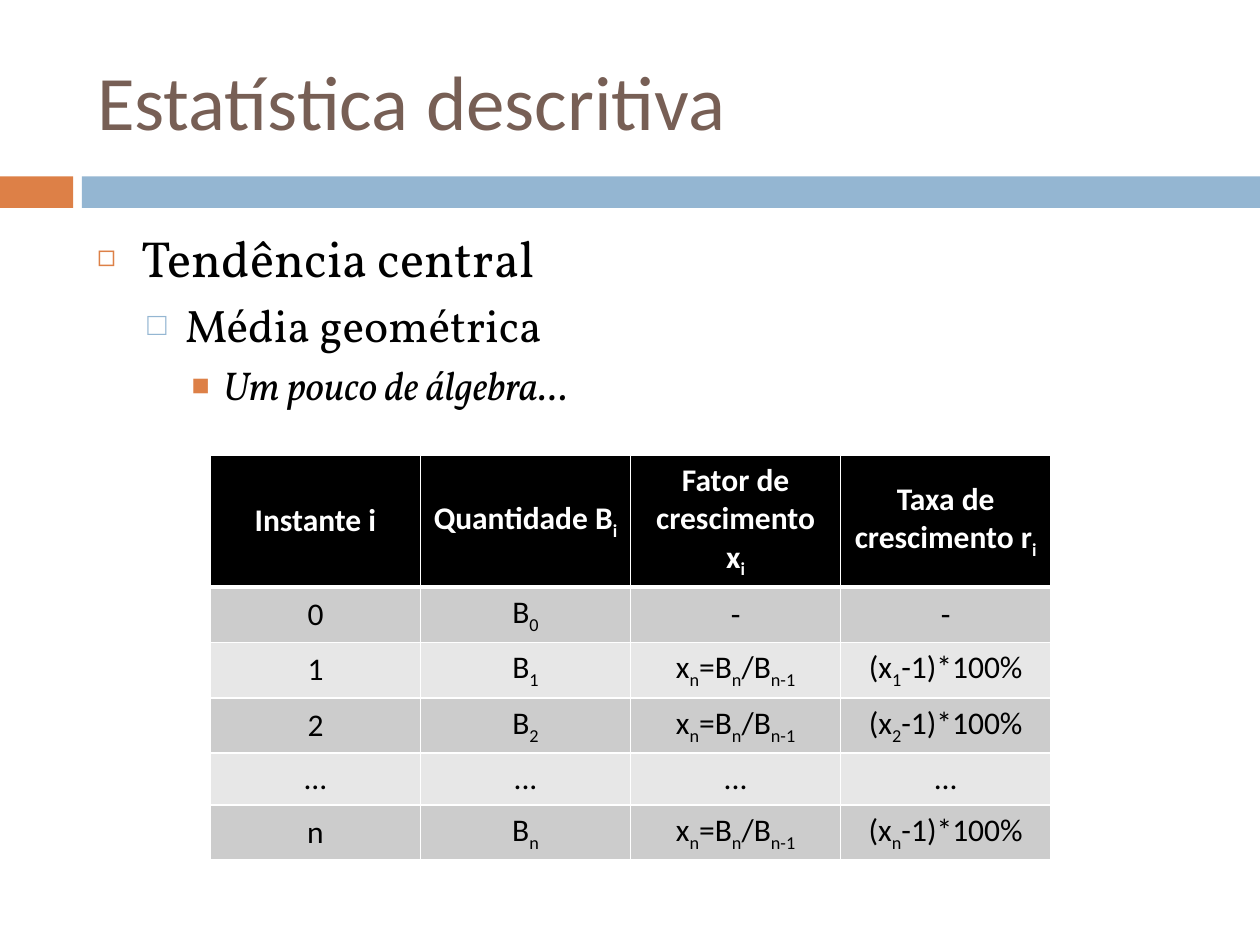
from lxml.etree import SubElement
from pptx import Presentation
from pptx.dml.color import RGBColor
from pptx.enum.shapes import MSO_SHAPE
from pptx.enum.text import MSO_ANCHOR, MSO_AUTO_SIZE, PP_ALIGN
from pptx.oxml.ns import qn
from pptx.util import Inches, Pt

COLORS = {
    "orange": "DD8047", "blue": "94B6D2", "brown": "775F55",
    "black": "000000", "white": "FFFFFF",
    "dark_band": "CCCCCC", "light_band": "E7E7E7",
}

# text, size, italic, space before, left indent, hanging, bullet, bullet color, bullet percent
OUTLINE = [
    ("Tendência central", 29, False, 7, 0.35, 0.35, "◻", "orange", 60),
    ("Média geométrica", 26, False, 5.5, 0.7, 0.3, "□", "blue", 70),
    ("Um pouco de álgebra...", 23, True, 5, 1, 0.25, "■", "orange", 75),
]

# Underscores enclose subscripts
HEADER = ["Instante i", "Quantidade B_i_", "Fator de crescimento x_i_",
          "Taxa de crescimento r_i_"]


def growth_row(instant):
    return [instant, f"B_{instant}_", "x_n_=B_n_/B_n-1_", f"(x_{instant}_-1)*100%"]


ROWS = [HEADER, ["0", "B_0_", "-", "-"], growth_row("1"), growth_row("2"),
        ["..."] * 4, growth_row("n")]


def color(name):
    return RGBColor.from_string(COLORS[name])


def style_font(font, name, size, color_name, bold=False, italic=False):
    font.name = name
    font.size = Pt(size)
    font.bold = bold
    font.italic = italic
    font.color.rgb = color(color_name)


def place(shape, left, top, width, height):
    shape.left, shape.top = left, top
    shape.width, shape.height = width, height


def add_bar(page, left, top, width, height, color_name):
    bar = page.shapes.add_shape(MSO_SHAPE.RECTANGLE, left, top, width, height)
    bar.shadow.inherit = False
    bar.fill.solid()
    bar.fill.fore_color.rgb = color(color_name)
    bar.line.fill.background()


def add_divider(page, left, top, width, height):
    """Draw the short orange bar and the long blue bar beside it."""
    blue_offset = Inches(0.65)
    add_bar(page, left, top, Inches(0.58), height, "orange")
    add_bar(page, left + blue_offset, top, width - blue_offset, height, "blue")


def fill_title(title, left, top, width, height):
    place(title, left, top, width, height)
    frame = title.text_frame
    frame.text = "Estatística descritiva"
    frame.auto_size = MSO_AUTO_SIZE.NONE
    frame.vertical_anchor = MSO_ANCHOR.MIDDLE
    para = frame.paragraphs[0]
    para.alignment = PP_ALIGN.LEFT
    style_font(para.runs[0].font, "Calibri", 44, "brown")


def set_bullet(para, indent, hanging, mark, color_name, percent):
    properties = para._p.get_or_add_pPr()
    properties.set("marL", str(Inches(indent)))
    properties.set("indent", str(-Inches(hanging)))
    bullet_color = SubElement(properties, qn("a:buClr"))
    SubElement(bullet_color, qn("a:srgbClr"), val=COLORS[color_name])
    SubElement(properties, qn("a:buSzPct"), val=str(percent * 1000))
    SubElement(properties, qn("a:buChar"), char=mark)


def fill_outline(body, left, top, width, height):
    place(body, left, top, width, height)
    frame = body.text_frame
    frame.text = "\n".join(item[0] for item in OUTLINE)
    frame.auto_size = MSO_AUTO_SIZE.NONE
    for level, (para, item) in enumerate(zip(frame.paragraphs, OUTLINE)):
        _, size, italic, space, *bullet = item
        para.level = level
        para.space_before = Pt(space)
        set_bullet(para, *bullet)
        style_font(para.runs[0].font, "Vollkorn", size, "black", italic=italic)


def set_borders(cell, top, bottom):
    properties = cell._tc.get_or_add_tcPr()
    sides = (("a:lnL", 1), ("a:lnR", 1), ("a:lnT", top), ("a:lnB", bottom))
    for position, (side, width) in enumerate(sides):
        line = SubElement(properties, qn(side), w=str(Pt(width)))
        fill = SubElement(line, qn("a:solidFill"))
        SubElement(fill, qn("a:srgbClr"), val=COLORS["white"])
        properties.insert(position, line)


def fill_cell(cell, text, row):
    is_header = row == 0
    cell.fill.solid()
    band = "dark_band" if row % 2 else "light_band"
    cell.fill.fore_color.rgb = color("black" if is_header else band)
    set_borders(cell, top=3 if row == 1 else 1, bottom=3 if is_header else 1)
    cell.vertical_anchor = MSO_ANCHOR.MIDDLE
    para = cell.text_frame.paragraphs[0]
    para.alignment = PP_ALIGN.CENTER
    for index, part in enumerate(text.split("_")):
        if part:
            span = para.add_run()
            span.text = part
            style_font(span.font, "Calibri", 18,
                       "white" if is_header else "black", bold=is_header)
            if index % 2:
                span.font._element.set("baseline", "-25000")


def add_growth_table(page, left, top, width, row_height):
    frame = page.shapes.add_table(len(ROWS), len(HEADER), left, top, width,
                                  row_height * len(ROWS))
    table = frame.table
    for row, texts in enumerate(ROWS):
        table.rows[row].height = row_height
        for column, text in enumerate(texts):
            fill_cell(table.cell(row, column), text, row)


def main():
    deck = Presentation()
    deck.slide_width, deck.slide_height = Inches(10), Inches(7.5)
    page = deck.slides.add_slide(deck.slide_layouts[1])
    title, body = page.placeholders
    left, width = Inches(0.67), Inches(8.92)
    add_divider(page, 0, Inches(1.4), deck.slide_width, Inches(0.25))
    fill_title(title, left, Inches(0.25), width, Inches(1.08))
    fill_outline(body, left, Inches(1.75), width, Inches(5.23))
    add_growth_table(page, Inches(1.67), Inches(3.61), Inches(6.67), Inches(0.41))
    deck.save("out.pptx")


if __name__ == "__main__":
    main()
